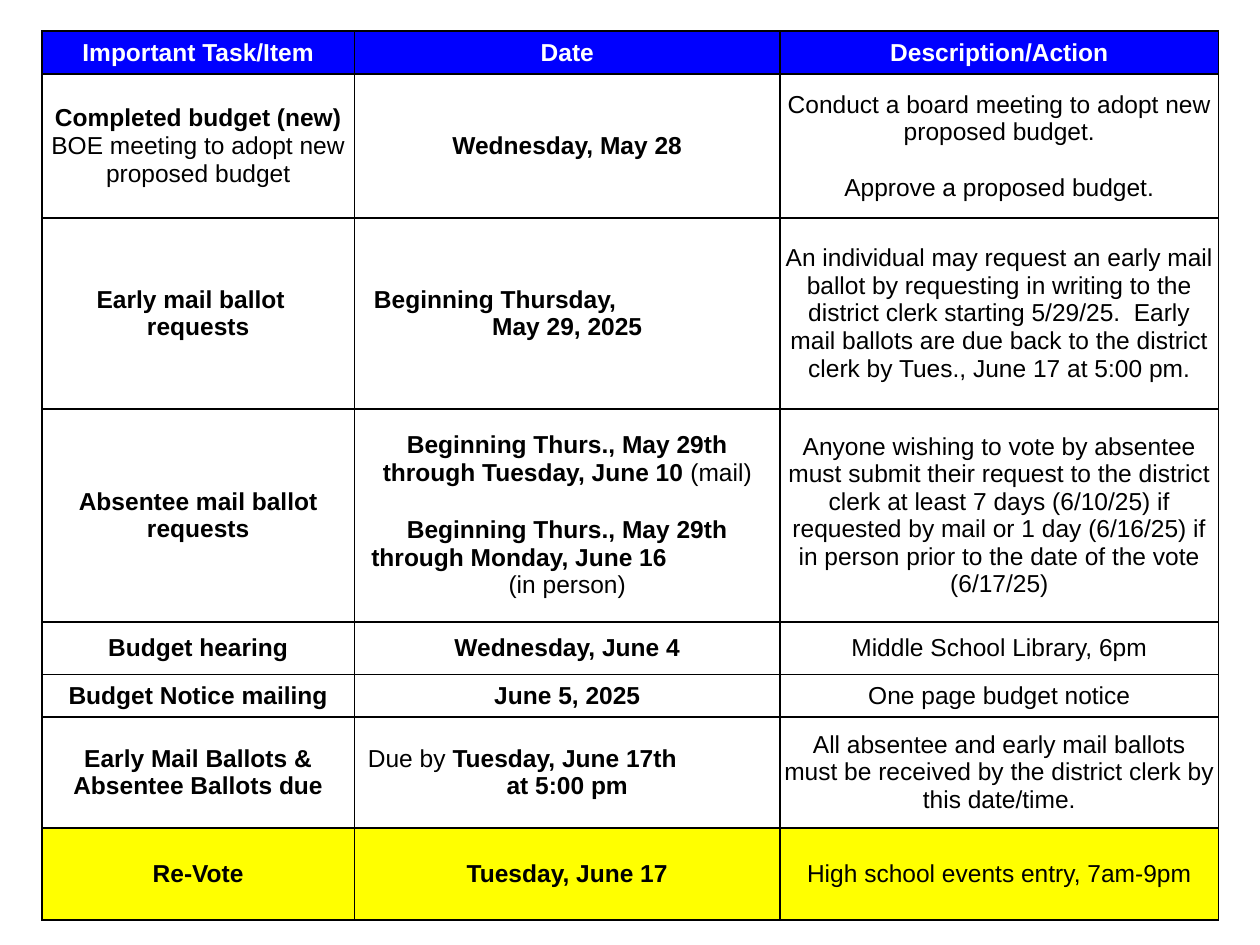
import pptx
import pptx.util
import pptx.dml.color
import pptx.enum.text
import pptx.oxml
from dataclasses import dataclass
from pptx.util import Pt

ALIGN = pptx.enum.text.PP_ALIGN


@dataclass(frozen=True)
class Theme:
    font: str = "Arial"
    size: float = 14
    ink: str = "000000"
    paper: str = "FFFFFF"
    head: str = "0000FF"
    vote: str = "FFFF00"
    rule: float = 1
    inset: float = 2.2


def color(code):
    return pptx.dml.color.RGBColor.from_string(code)


def line(text, bold=False, gap=0, indent=None):
    """Describe a paragraph: '*' toggles bold, an indent aligns it left."""
    return dict(text=text, bold=bold, gap=gap, indent=indent)


def strong(text, **form):
    return line(text, bold=True, **form)


class Deck:
    """Holds the theme and the current slide."""

    def __init__(self, theme, width, height):
        self.theme = theme
        self.file = pptx.Presentation()
        self.file.slide_width, self.file.slide_height = Pt(width), Pt(height)
        self.slide = self.file.slides.add_slide(self.file.slide_layouts[6])

    def label(self, para, ink, text, bold, gap, indent):
        if indent is None:
            para.alignment = ALIGN.CENTER
        else:
            para.alignment = ALIGN.LEFT
            para._p.get_or_add_pPr().set("marL", str(Pt(indent)))
        if gap:
            para.space_before = Pt(gap)
        for part in text.split("*"):
            if part:
                run = para.add_run()
                run.text = part
                run.font.name = self.theme.font
                run.font.size = Pt(self.theme.size)
                run.font.bold = bold
                run.font.color.rgb = color(ink)
            bold = not bold

    def frame(self, cell):
        props = cell._tc.get_or_add_tcPr()
        for side in "LRTB":
            props.append(pptx.oxml.parse_xml(
                f'<a:ln{side} xmlns:a="http://schemas.openxmlformats.org/drawingml/2006/main"'
                f' w="{Pt(self.theme.rule)}"><a:solidFill>'
                f'<a:srgbClr val="{self.theme.ink}"/></a:solidFill></a:ln{side}>'))

    def cell(self, cell, lines, fill, ink):
        self.frame(cell)
        cell.fill.solid()
        cell.fill.fore_color.rgb = color(fill)
        cell.vertical_anchor = pptx.enum.text.MSO_ANCHOR.MIDDLE
        inset = Pt(self.theme.inset)
        cell.margin_left = cell.margin_right = inset
        cell.margin_top = cell.margin_bottom = inset
        body = cell.text_frame
        for num, form in enumerate(lines):
            para = body.add_paragraph() if num else body.paragraphs[0]
            self.label(para, ink, **form)

    def table(self, left, top, widths, rows):
        """Draw rows given as (height, fill, ink, cells)."""
        table = self.slide.shapes.add_table(
            len(rows), len(widths), Pt(left), Pt(top),
            Pt(sum(widths)), Pt(sum(row[0] for row in rows))).table
        table.first_row = table.horz_banding = False
        for col, width in zip(table.columns, widths):
            col.width = Pt(width)
        for num, (height, fill, ink, cells) in enumerate(rows):
            table.rows[num].height = Pt(height)
            for col, lines in enumerate(cells):
                self.cell(table.cell(num, col), lines, fill, ink)


def main():
    theme = Theme()
    deck = Deck(theme, 720, 540)
    plain = (theme.paper, theme.ink)
    heads = ["Important Task/Item", "Date", "Description/Action"]
    rows = [
        (24.5, theme.head, theme.paper, [[strong(name)] for name in heads]),
        (82.3, *plain, [
            [strong("Completed budget (new)"),
             line("BOE meeting to adopt new proposed budget")],
            [strong("Wednesday, May 28")],
            [line("Conduct a board meeting to adopt new proposed budget."),
             line("Approve a proposed budget.", gap=16)]]),
        (109.1, *plain, [
            [strong("Early mail ballot", indent=29), strong("requests")],
            [strong("Beginning Thursday,", indent=9), strong("May 29, 2025")],
            [line("An individual may request an early mail ballot by requesting "
                  "in writing to the district clerk starting 5/29/25.  Early "
                  "mail ballots are due back to the district clerk by Tues., "
                  "June 17 at 5:00 pm.")]]),
        (121.7, *plain, [
            [strong("Absentee mail ballot requests")],
            [strong("Beginning Thurs., May 29th"),
             strong("through Tuesday, June 10 *(mail)"),
             strong("Beginning Thurs., May 29th", gap=17),
             strong("through Monday, June 16", indent=7.5),
             line("(in person)")],
            [line("Anyone wishing to vote by absentee must submit their request "
                  "to the district clerk at least 7 days (6/10/25) if requested "
                  "by mail or 1 day (6/16/25) if in person prior to the date of "
                  "the vote (6/17/25)")]]),
        (30, *plain, [
            [strong("Budget hearing")], [strong("Wednesday, June 4")],
            [line("Middle School Library, 6pm")]]),
        (24.3, *plain, [
            [strong("Budget Notice mailing")], [strong("June 5, 2025")],
            [line("One page budget notice")]]),
        (63.4, *plain, [
            [strong("Early Mail Ballots & Absentee Ballots due")],
            [line("Due by *Tuesday, June 17th", indent=5.5),
             strong("at 5:00 pm")],
            [line("All absentee and early mail ballots must be received by the "
                  "district clerk by this date/time.")]]),
        (52.6, theme.vote, theme.ink, [
            [strong("Re-Vote")], [strong("Tuesday, June 17")],
            [line("High school events entry, 7am-9pm")]]),
    ]
    deck.table(24, 17.8, [178.5, 243.3, 250.5], rows)
    deck.file.save("out.pptx")


if __name__ == "__main__":
    main()
